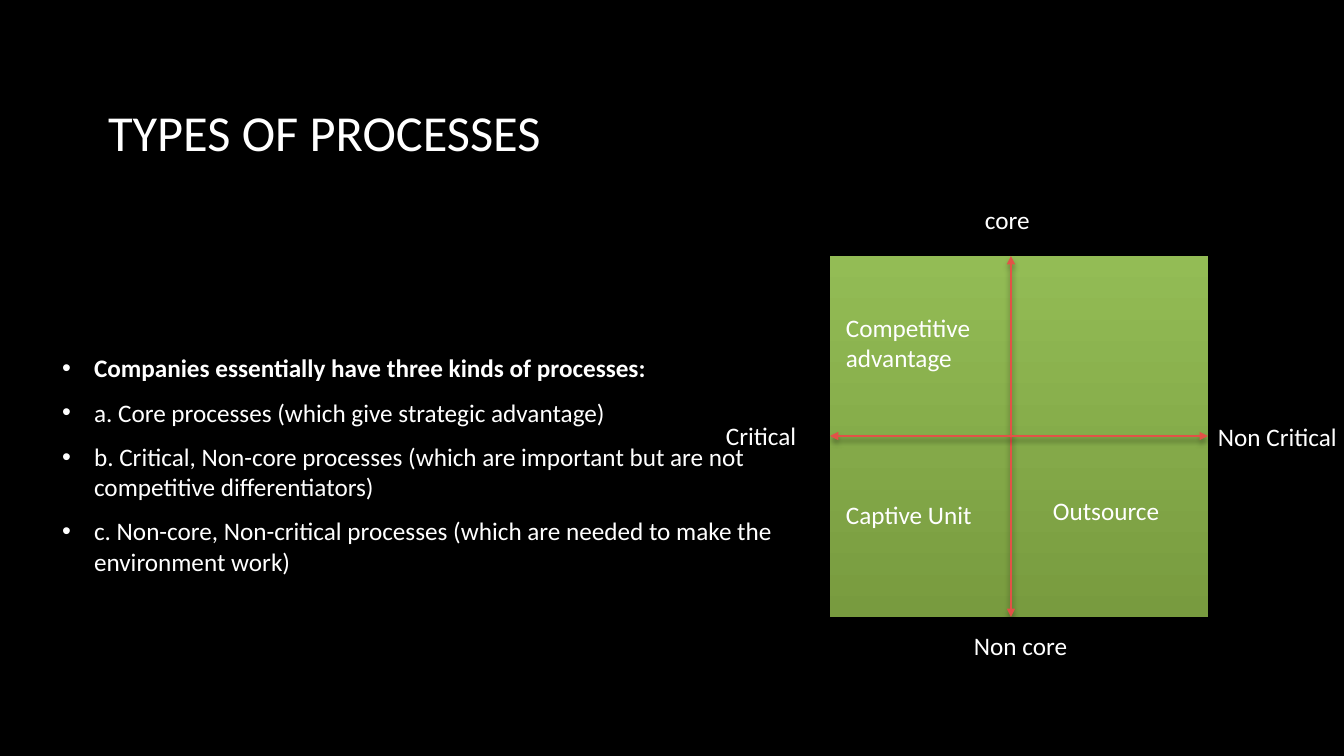
import pptx
import pptx.util
import pptx.dml.color
import pptx.enum.shapes
import pptx.enum.text
import pptx.oxml
import pptx.oxml.ns

WIDE, HIGH = 1344, 756
TITLE = "TYPES OF PROCESSES"
POINTS = [
    "Companies essentially have three kinds of processes:",
    "a. Core processes (which give strategic advantage)",
    "b. Critical, Non-core processes (which are important but are not competitive differentiators)",
    "c. Non-core, Non-critical processes (which are needed to make the environment work)",
]
LABELS = [
    ("core", 975, 199, 78, 40),
    ("Non core", 964, 625, 118, 40),
    ("Critical", 716, 415, 118, 40),
    ("Non Critical", 1208, 416, 188, 40),
    ("Competitive advantage", 836, 307, 188, 72),
    ("Captive Unit", 836, 494, 168, 40),
    ("Outsource", 1043, 490, 168, 40),
]
SQUARE = (830, 256, 378, 361)
MID_X, MID_Y = 1011, 436
GREENS = ["93BC55", "789B3F"]
WHITE, BLACK, RED = "FFFFFF", "000000", "E25247"
HEAD = {"size": pptx.util.Pt(36), "name": "Calibri", "bold": False}
TEXT = {"size": pptx.util.Pt(18), "name": "Calibri", "bold": False}
LEAD = {**TEXT, "bold": True}
MIDDLE = {
    "vertical_anchor": pptx.enum.text.MSO_ANCHOR.MIDDLE,
    "auto_size": pptx.enum.text.MSO_AUTO_SIZE.NONE,
    "word_wrap": True,
}
GROW = {"auto_size": pptx.enum.text.MSO_AUTO_SIZE.SHAPE_TO_FIT_TEXT, "word_wrap": True}
GAPS = {"space_before": pptx.util.Pt(0), "space_after": pptx.util.Pt(10)}


def px(num):
    return pptx.util.Emu(round(num * 914400 / 100.8))


def color(code):
    return pptx.dml.color.RGBColor.from_string(code)


def apply(item, form):
    for name, value in form.items():
        setattr(item, name, value)


def place(shape, *box):
    apply(shape, dict(zip(("left", "top", "width", "height"), map(px, box))))


def style(para, form):
    apply(para.font, form)
    para.font.color.rgb = color(WHITE)


def add(parent, tag, inner="", **attrs):
    words = "".join(f' {key}="{value}"' for key, value in attrs.items())
    space = pptx.oxml.ns.nsdecls("a")
    node = pptx.oxml.parse_xml(f"<a:{tag} {space}{words}>{inner}</a:{tag}>")
    parent.append(node)
    return node


def shade(props, alpha, blur, dist):
    old = props.find(pptx.oxml.ns.qn("a:effectLst"))
    if old is not None:
        props.remove(old)
    inner = f'<a:srgbClr val="{BLACK}"><a:alpha val="{alpha * 1000}"/></a:srgbClr>'
    add(add(props, "effectLst"), "outerShdw", inner, blurRad=blur * 12700,
        dist=dist * 12700, dir=5400000, rotWithShape=0)


def bullet(para):
    props = para._p.get_or_add_pPr()
    props.set("marL", str(px(32)))
    props.set("indent", str(px(-32)))
    add(props, "buClr", f'<a:srgbClr val="{WHITE}"/>')
    add(props, "buFont", typeface="Arial")
    add(props, "buChar", char="•")


def write_main(slide):
    title, body = slide.placeholders
    place(title, 98, 51, 1117, 160)
    place(body, 52, 173, 777, 583)
    for shape in (title, body):
        apply(shape.text_frame, MIDDLE)
    title.text_frame.text = TITLE
    para = title.text_frame.paragraphs[0]
    para.alignment = pptx.enum.text.PP_ALIGN.LEFT
    style(para, HEAD)
    body.text_frame.text = "\n".join(POINTS)
    for rank, para in enumerate(body.text_frame.paragraphs):
        apply(para, GAPS)
        bullet(para)
        style(para, TEXT if rank else LEAD)


def draw_grid(slide):
    left, top, width, height = SQUARE
    group = slide.shapes.add_group_shape()
    square = group.shapes.add_shape(
        pptx.enum.shapes.MSO_SHAPE.RECTANGLE, *map(px, SQUARE))
    square.line.fill.background()
    square.fill.gradient()
    square.fill.gradient_angle = 270
    for rank, (stop, code) in enumerate(zip(square.fill.gradient_stops, GREENS)):
        stop.position = rank
        stop.color.rgb = color(code)
    square.shadow.inherit = False
    shade(square._element.spPr, 65, 5, 3)
    axes = [
        (MID_X, top, MID_X, top + height),
        (left, MID_Y, left + width, MID_Y),
    ]
    for ends in axes:
        axis = group.shapes.add_connector(
            pptx.enum.shapes.MSO_CONNECTOR.STRAIGHT, *map(px, ends))
        axis.line.color.rgb = color(RED)
        axis.line.width = pptx.util.Pt(2)
        for tag in ("headEnd", "tailEnd"):
            add(axis.line._get_or_add_ln(), tag, type="triangle")
        shade(axis._element.spPr, 35, 4, 3)


def main():
    deck = pptx.Presentation()
    apply(deck, {"slide_width": px(WIDE), "slide_height": px(HIGH)})
    slide = deck.slides.add_slide(deck.slide_layouts[1])
    slide.background.fill.solid()
    slide.background.fill.fore_color.rgb = color(BLACK)
    write_main(slide)
    draw_grid(slide)
    for words, *box in LABELS:
        frame = slide.shapes.add_textbox(*map(px, box)).text_frame
        apply(frame, GROW)
        frame.text = words
        style(frame.paragraphs[0], TEXT)
    deck.save("out.pptx")


if __name__ == "__main__":
    main()
